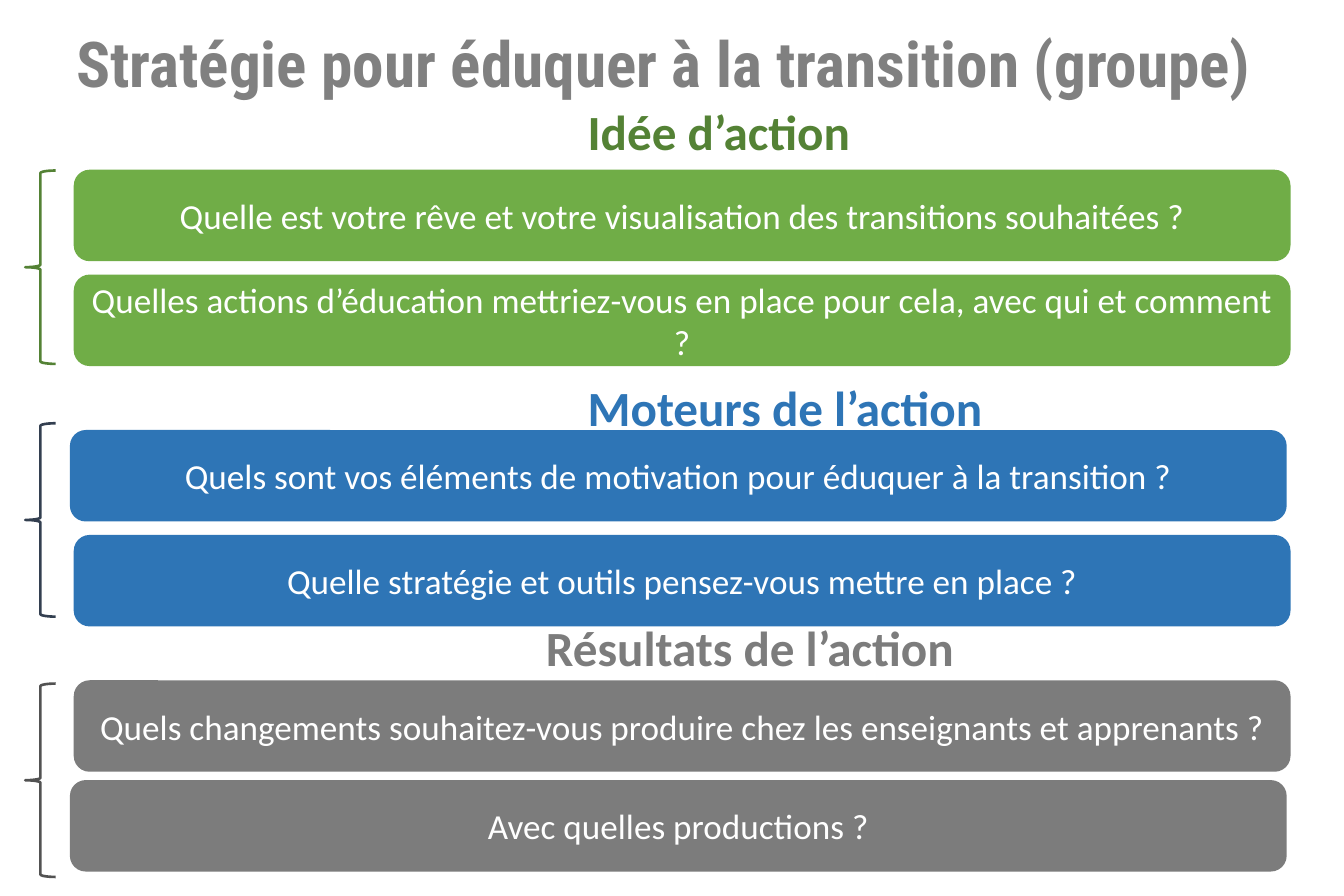
from dataclasses import dataclass

from pptx import Presentation
from pptx.dml.color import RGBColor
from pptx.enum.shapes import MSO_SHAPE
from pptx.enum.text import MSO_ANCHOR, PP_ALIGN
from pptx.util import Emu, Pt

ROUNDED = MSO_SHAPE.ROUNDED_RECTANGLE
LEFT_BRACE = MSO_SHAPE.LEFT_BRACE
TOP, MIDDLE, BOTTOM = MSO_ANCHOR.TOP, MSO_ANCHOR.MIDDLE, MSO_ANCHOR.BOTTOM
LEFT, CENTER = PP_ALIGN.LEFT, PP_ALIGN.CENTER

EMU_PER_PX = 9144  # 100 px to the inch
SLIDE_SIZE = (1063, 709)
CARD_SIZE = (961, 71)
BRACE_LEFT, BRACE_SIZE = 20, (24, 153)


@dataclass(frozen=True)
class Theme:
    title_font: str = "Roboto Condensed"
    body_font: str = "Calibri"
    title_size: int = 36
    heading_size: int = 28
    question_size: int = 20
    title: str = "808080"
    white: str = "FFFFFF"
    green: str = "70AD47"
    dark_green: str = "548235"
    blue: str = "2E75B6"
    navy: str = "333F50"
    gray: str = "7C7C7C"
    dark_gray: str = "525252"


THEME = Theme()

# Each section: heading with its box, colours, brace top, questions as (left, top, text)
SECTIONS = [
    {
        "heading": "Idée d’action", "box": (455, 75, 266, 57),
        "heading_color": THEME.dark_green, "fill": THEME.green,
        "brace_color": THEME.dark_green, "brace_top": 135,
        "questions": [
            (59, 135, "Quelle est votre rêve et votre visualisation des transitions souhaitées ?"),
            (59, 218, "Quelles actions d’éducation mettriez-vous en place pour cela, "
                      "avec qui et comment ?"),
        ],
    },
    {
        "heading": "Moteurs de l’action", "box": (455, 294, 343, 57),
        "heading_color": THEME.blue, "fill": THEME.blue,
        "brace_color": THEME.navy, "brace_top": 335,
        "questions": [
            (56, 341, "Quels sont vos éléments de motivation pour éduquer à la transition ?"),
            (59, 424, "Quelle stratégie et outils pensez-vous mettre en place ?"),
        ],
    },
    {
        "heading": "Résultats de l’action", "box": (422, 484, 456, 57),
        "heading_color": THEME.gray, "fill": THEME.gray,
        "brace_color": THEME.dark_gray, "brace_top": 541,
        "questions": [
            (59, 539, "Quels changements souhaitez-vous produire chez les enseignants "
                      "et apprenants ?"),
            (56, 618, "Avec quelles productions ?"),
        ],
    },
]


def px(*lengths):
    return [Emu(length * EMU_PER_PX) for length in lengths]


def rgb(color):
    return RGBColor.from_string(color)


def write(frame, text, font_name, size, color, bold=False, align=LEFT, anchor=TOP):
    frame.word_wrap = True
    frame.vertical_anchor = anchor
    paragraph = frame.paragraphs[0]
    paragraph.text = text
    paragraph.alignment = align
    font = paragraph.font
    font.name, font.size, font.bold = font_name, Pt(size), bold
    font.color.rgb = rgb(color)


def add_title(slide, text):
    frame = slide.shapes.add_textbox(*px(30, 0, 990, 79)).text_frame
    frame.margin_left = frame.margin_right = frame.margin_top = frame.margin_bottom = 0
    write(frame, text, THEME.title_font, THEME.title_size, THEME.title,
          bold=True, align=CENTER, anchor=BOTTOM)


def add_heading(slide, text, box, color):
    frame = slide.shapes.add_textbox(*px(*box)).text_frame
    write(frame, text, THEME.body_font, THEME.heading_size, color, bold=True)


def add_outlined(slide, preset, box, color, width):
    shape = slide.shapes.add_shape(preset, *px(*box))
    shape.shadow.inherit = False
    shape.line.color.rgb = rgb(color)
    shape.line.width = Pt(width)
    return shape


def add_question(slide, left, top, text, color):
    card = add_outlined(slide, ROUNDED, (left, top, *CARD_SIZE), color, 1)
    card.fill.solid()
    card.fill.fore_color.rgb = rgb(color)
    write(card.text_frame, text, THEME.body_font, THEME.question_size, THEME.white,
          align=CENTER, anchor=MIDDLE)


def add_brace(slide, top, color):
    brace = add_outlined(slide, LEFT_BRACE, (BRACE_LEFT, top, *BRACE_SIZE), color, 1.5)
    brace.fill.background()


def add_section(slide, section):
    for left, top, text in section["questions"]:
        add_question(slide, left, top, text, section["fill"])
    add_brace(slide, section["brace_top"], section["brace_color"])
    add_heading(slide, section["heading"], section["box"], section["heading_color"])


def main():
    deck = Presentation()
    deck.slide_width, deck.slide_height = px(*SLIDE_SIZE)
    slide = deck.slides.add_slide(deck.slide_layouts[6])

    # Title, then the three stages of the strategy
    add_title(slide, "Stratégie pour éduquer à la transition (groupe)")
    for section in SECTIONS:
        add_section(slide, section)

    deck.save("out.pptx")


if __name__ == "__main__":
    main()
